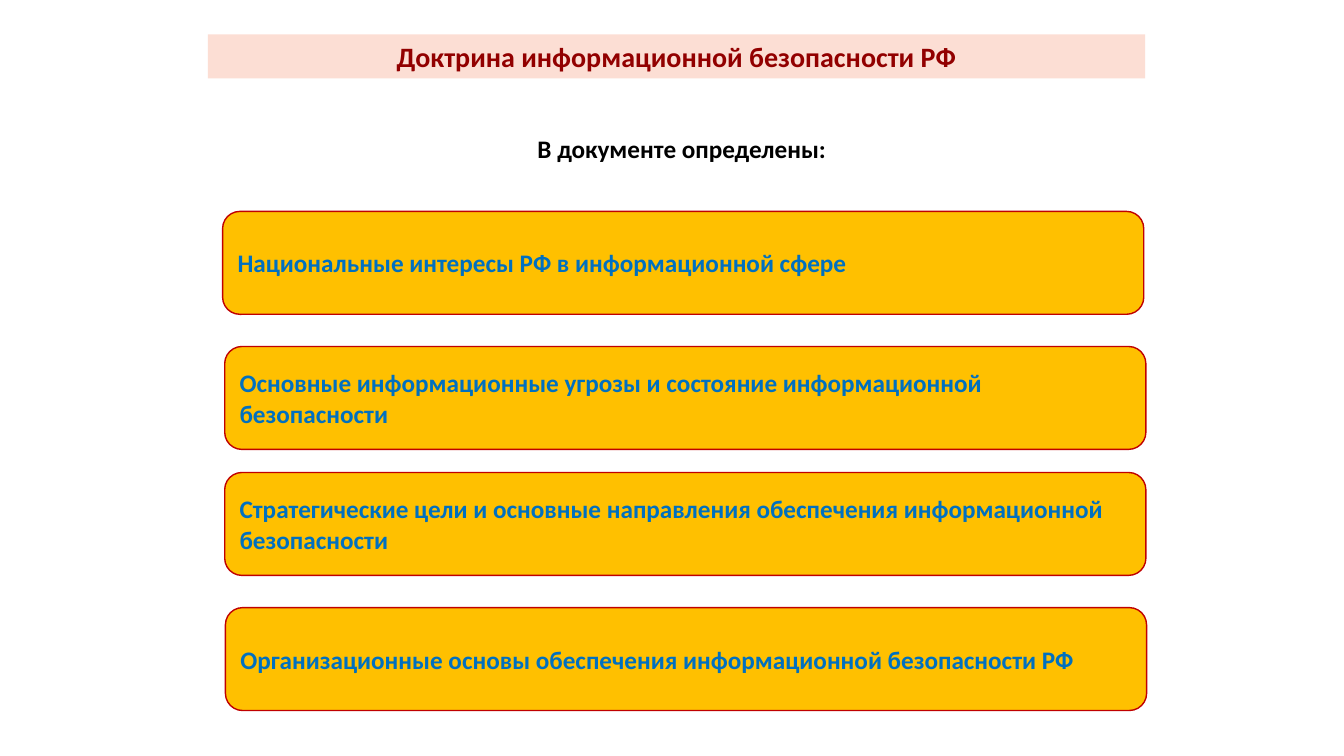
from pptx import Presentation
from pptx.dml.color import RGBColor
from pptx.enum.shapes import MSO_SHAPE
from pptx.enum.text import MSO_ANCHOR, MSO_AUTO_SIZE, PP_ALIGN
from pptx.util import Pt

FONT = "Calibri"
PINK = RGBColor(0xFC, 0xDE, 0xD4)
DARK_RED = RGBColor(0x92, 0x00, 0x00)
RED = RGBColor(0xC0, 0x00, 0x00)
AMBER = RGBColor(0xFF, 0xC0, 0x00)
BLUE = RGBColor(0x00, 0x70, 0xC0)
BLACK = RGBColor(0x00, 0x00, 0x00)

TITLE = "Доктрина информационной безопасности РФ"
SUBHEADING = "В документе определены:"
# Left offset, top offset and wording of each card
CARDS = [
    (0, 0, "Национальные интересы РФ в информационной сфере"),
    (1.5, 96.5, "Основные информационные угрозы и состояние информационной безопасности"),
    (1.5, 186.5, "Стратегические цели и основные направления обеспечения информационной безопасности"),
    (2, 283, "Организационные основы обеспечения информационной безопасности РФ"),
]
CARD_HEIGHT = 73.5


def write_text(shape, text, *, size=18, color=BLACK, align=PP_ALIGN.LEFT,
               anchor=MSO_ANCHOR.TOP):
    frame = shape.text_frame
    frame.word_wrap = True
    frame.auto_size = MSO_AUTO_SIZE.NONE
    frame.vertical_anchor = anchor
    paragraph = frame.paragraphs[0]
    paragraph.alignment = align
    run = paragraph.add_run()
    run.text = text
    run.font.name = FONT
    run.font.size = Pt(size)
    run.font.bold = True
    run.font.color.rgb = color


def add_title(slide, left, top, width, height):
    title = slide.shapes.title
    title.left, title.top = Pt(left), Pt(top)
    title.width, title.height = Pt(width), Pt(height)
    title.fill.solid()
    title.fill.fore_color.rgb = PINK
    write_text(title, TITLE, size=20, color=DARK_RED, align=PP_ALIGN.CENTER)


def add_subheading(slide, left, top, width, height):
    box = slide.shapes.add_textbox(Pt(left), Pt(top), Pt(width), Pt(height))
    write_text(box, SUBHEADING, align=PP_ALIGN.CENTER)


def add_cards(slide, left, top, width):
    for shift, offset, text in CARDS:
        card = slide.shapes.add_shape(
            MSO_SHAPE.ROUNDED_RECTANGLE, Pt(left + shift), Pt(top + offset),
            Pt(width), Pt(CARD_HEIGHT))
        card.shadow.inherit = False
        card.fill.solid()
        card.fill.fore_color.rgb = AMBER
        card.line.color.rgb = RED
        card.line.width = Pt(1)
        write_text(card, text, color=BLUE, anchor=MSO_ANCHOR.MIDDLE)


def main():
    presentation = Presentation()
    presentation.slide_width, presentation.slide_height = Pt(960), Pt(540)
    title_only = presentation.slide_layouts[5]
    slide = presentation.slides.add_slide(title_only)

    # Title band
    add_title(slide, 148.5, 24.5, 669.5, 31.5)
    # Lead-in to the list
    add_subheading(slide, 161, 92, 652, 29)
    # Contents of the doctrine
    add_cards(slide, 159, 151, 658)

    presentation.save("out.pptx")


if __name__ == "__main__":
    main()
